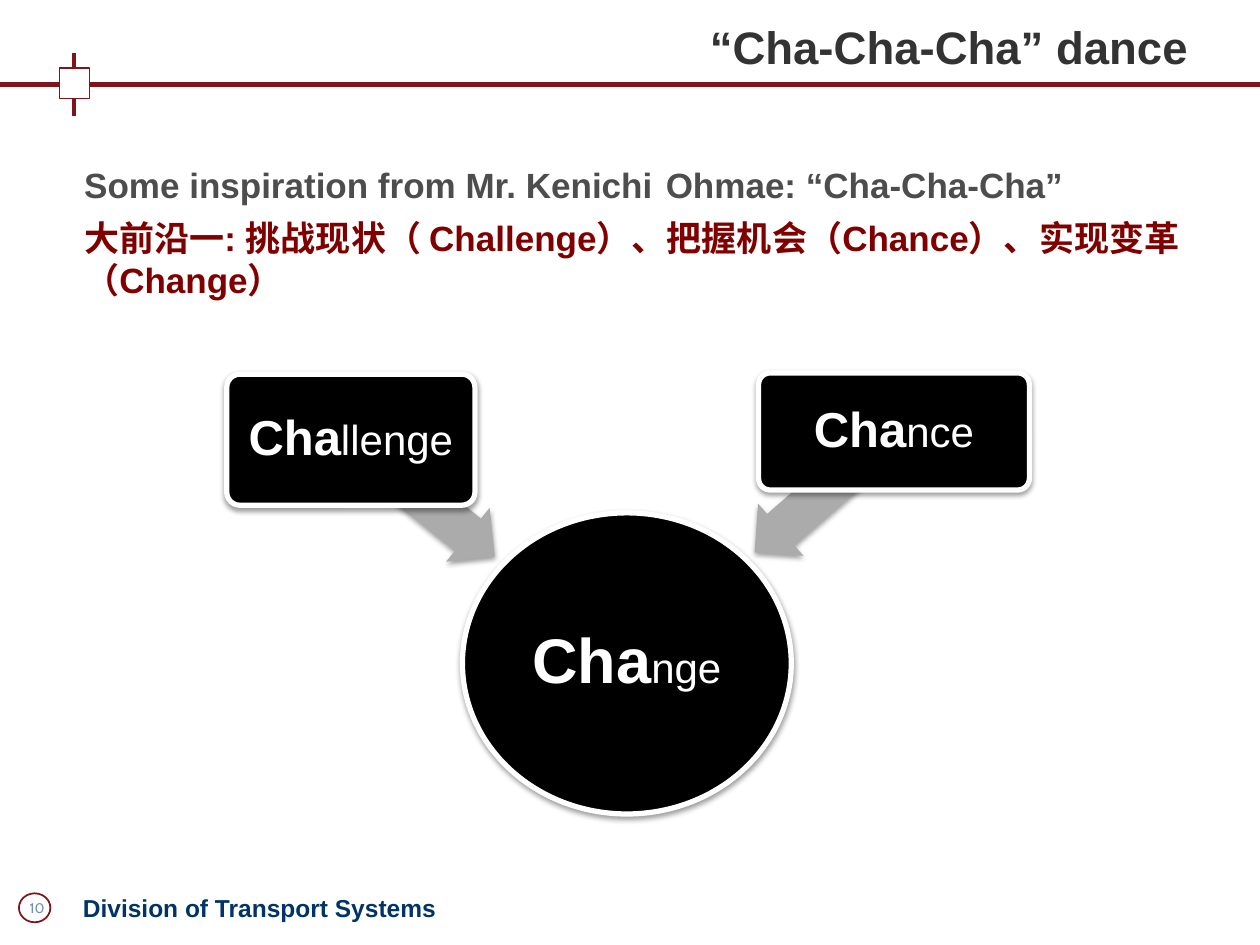
"""Build the "Cha-Cha-Cha" dance slide."""
from typing import NamedTuple, Optional

from lxml import etree
from pptx import Presentation
from pptx.dml.color import RGBColor
from pptx.enum.shapes import MSO_CONNECTOR, MSO_SHAPE
from pptx.enum.text import MSO_ANCHOR, PP_ALIGN
from pptx.oxml.ns import qn
from pptx.util import Inches, Pt

LEFT, CENTER, RIGHT = PP_ALIGN.LEFT, PP_ALIGN.CENTER, PP_ALIGN.RIGHT
TOP, MIDDLE = MSO_ANCHOR.TOP, MSO_ANCHOR.MIDDLE
RECT, OVAL = MSO_SHAPE.RECTANGLE, MSO_SHAPE.OVAL
ROUNDED, ARROW = MSO_SHAPE.ROUNDED_RECTANGLE, MSO_SHAPE.LEFT_ARROW
STRAIGHT = MSO_CONNECTOR.STRAIGHT
MAROON, WHITE, BLACK, GREY = "7F141D", "FFFFFF", "000000", "ABABAB"


class Box(NamedTuple):
    """Left, top, width and height in inches."""
    left: float
    top: float
    width: float
    height: float


class Run(NamedTuple):
    """Text with one character format."""
    text: str
    size: float
    color: str
    bold: bool = True
    font: str = "Arial"


class Node(NamedTuple):
    """Black shape holding a word that starts with a larger "Cha"."""
    kind: int
    box: Box
    ending: str
    cha_size: float
    inset: float


class Pointer(NamedTuple):
    """Block arrow aimed at the central circle."""
    box: Box
    rotation: float


def rgb(value: str) -> RGBColor:
    """Turn a hex string into a colour."""
    return RGBColor.from_string(value)


def inches(box: Box) -> list:
    """Turn a box into lengths."""
    return [Inches(value) for value in box]


def add_runs(paragraph, runs: list[Run]) -> None:
    """Write formatted runs into a paragraph."""
    for item in runs:
        run = paragraph.add_run()
        run.text = item.text
        run.font.name, run.font.size, run.font.bold = item.font, Pt(item.size), item.bold
        run.font.color.rgb = rgb(item.color)


def add_text(slide, box: Box, paragraphs: list[list[Run]], align=LEFT, anchor=TOP) -> None:
    """Add a wrapping text box."""
    frame = slide.shapes.add_textbox(*inches(box)).text_frame
    frame.word_wrap, frame.vertical_anchor = True, anchor
    for index, runs in enumerate(paragraphs):
        paragraph = frame.add_paragraph() if index else frame.paragraphs[0]
        paragraph.alignment = align
        if index:
            paragraph.space_before = Pt(4)
        add_runs(paragraph, runs)


def add_figure(slide, kind: int, box: Box, fill: Optional[str],
               line: Optional[str] = None, width: float = 1):
    """Add a preset shape without shadow."""
    figure = slide.shapes.add_shape(kind, *inches(box))
    figure.shadow.inherit = False
    if fill:
        figure.fill.solid()
        figure.fill.fore_color.rgb = rgb(fill)
    else:
        figure.fill.background()
    if line:
        figure.line.color.rgb = rgb(line)
        figure.line.width = Pt(width)
    else:
        figure.line.fill.background()
    return figure


def add_shadow(figure) -> None:
    """Give a shape a soft shadow below it."""
    effects = figure._element.spPr.find(qn("a:effectLst"))
    shadow = etree.SubElement(effects, qn("a:outerShdw"), blurRad=str(Pt(3.1)),
                              dist=str(Pt(1.6)), dir="5400000", rotWithShape="0")
    color = etree.SubElement(shadow, qn("a:srgbClr"), val=BLACK)
    etree.SubElement(color, qn("a:alpha"), val="38000")


def add_rule(slide, start: tuple, end: tuple, width: float) -> None:
    """Add a maroon straight line."""
    rule = slide.shapes.add_connector(STRAIGHT, *map(Inches, start + end))
    rule.line.color.rgb = rgb(MAROON)
    rule.line.width = Pt(width)
    etree.SubElement(rule._element.spPr, qn("a:effectLst"))


def add_node(slide, node: Node) -> None:
    """Draw a node with its word."""
    figure = add_figure(slide, node.kind, node.box, BLACK, WHITE, 3)
    add_shadow(figure)
    if node.kind == ROUNDED:
        figure.adjustments[0] = 0.1
    frame = figure.text_frame
    frame.word_wrap, frame.vertical_anchor = True, MIDDLE
    frame.margin_left = frame.margin_right = Inches(node.inset)
    frame.margin_top = frame.margin_bottom = Inches(node.inset)
    word = frame.paragraphs[0]
    word.alignment, word.line_spacing = CENTER, 0.9
    add_runs(word, [Run("Cha", node.cha_size, WHITE), Run(node.ending, 24, WHITE, False)])


def add_pointer(slide, pointer: Pointer) -> None:
    """Draw a rotated block arrow."""
    figure = add_figure(slide, ARROW, pointer.box, GREY)
    add_shadow(figure)
    figure.adjustments[0], figure.adjustments[1] = 0.6, 0.5
    figure.rotation = pointer.rotation


def add_frame(slide) -> None:
    """Draw the header rules and the footer."""
    add_rule(slide, (0.59, 0.42), (0.59, 0.92), 2.25)
    add_rule(slide, (0, 0.67), (10, 0.67), 3)
    add_figure(slide, RECT, Box(0.47, 0.54, 0.24, 0.24), WHITE, MAROON, 0.75)
    add_text(slide, Box(0.12, 7.09, 0.35, 0.24),
             [[Run("10", 8, "718EB5", False, "Cabin")]], CENTER)
    add_figure(slide, OVAL, Box(0.15, 7.09, 0.25, 0.23), None, MAROON)
    add_text(slide, Box(0.56, 7.04, 4.33, 0.33),
             [[Run("Division of Transport Systems", 14, "003366")]])


def main() -> None:
    """Assemble and save the slide."""
    deck = Presentation()
    deck.slide_width, deck.slide_height = Inches(10), Inches(7.5)
    slide = deck.slides.add_slide(deck.slide_layouts[6])
    add_frame(slide)
    add_text(slide, Box(1.06, 0.14, 8.47, 0.46),
             [[Run("“Cha-Cha-Cha” dance", 26, "333333")]], RIGHT, MIDDLE)
    add_node(slide, Node(OVAL, Box(3.67, 4.07, 2.61, 2.39), "nge", 36, 0.03))
    sources = [
        (Pointer(Box(2.62, 3.68, 1.47, 0.55), 218.9),
         Node(ROUNDED, Box(1.8, 2.97, 1.97, 1.04), "llenge", 28, 0.06)),
        (Pointer(Box(5.81, 3.63, 1.46, 0.55), 319),
         Node(ROUNDED, Box(6.02, 2.96, 2.15, 0.93), "nce", 28, 0.06)),
    ]
    for pointer, node in sources:
        add_pointer(slide, pointer)
        add_node(slide, node)
    add_text(slide, Box(0.57, 1.08, 9.1, 1.38), [
        [Run("Some inspiration from Mr. Kenichi", 20, "4D4D4D"),
         Run(" ", 32, "7F7F7F", False, "Cabin"),
         Run("Ohmae: “Cha-Cha-Cha”", 20, "4D4D4D")],
        [Run("大前沿一: 挑战现状（ Challenge）、把握机会（Chance）、实现变革（Change）",
             20, "800000")],
    ])
    deck.save("out.pptx")


if __name__ == "__main__":
    main()
